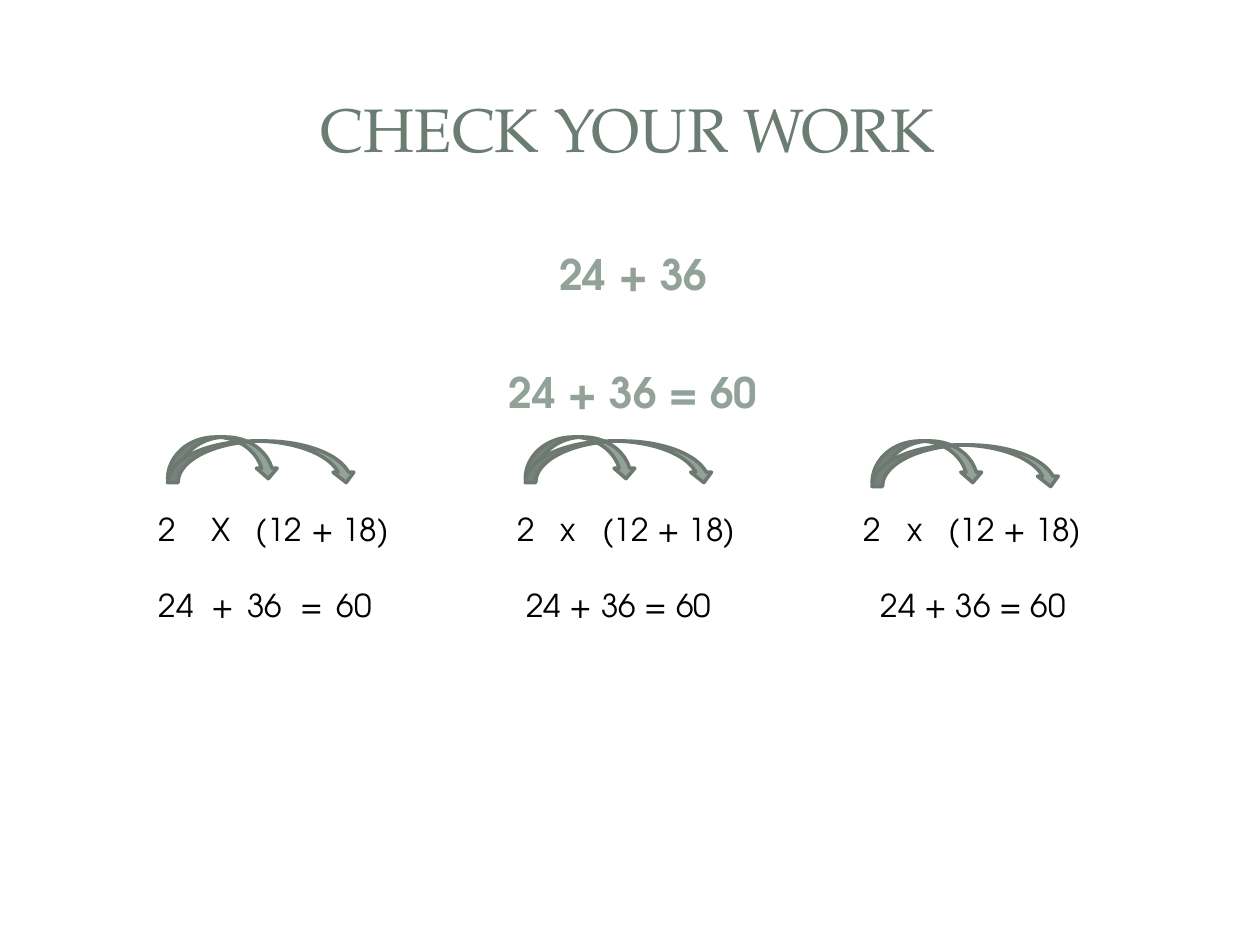
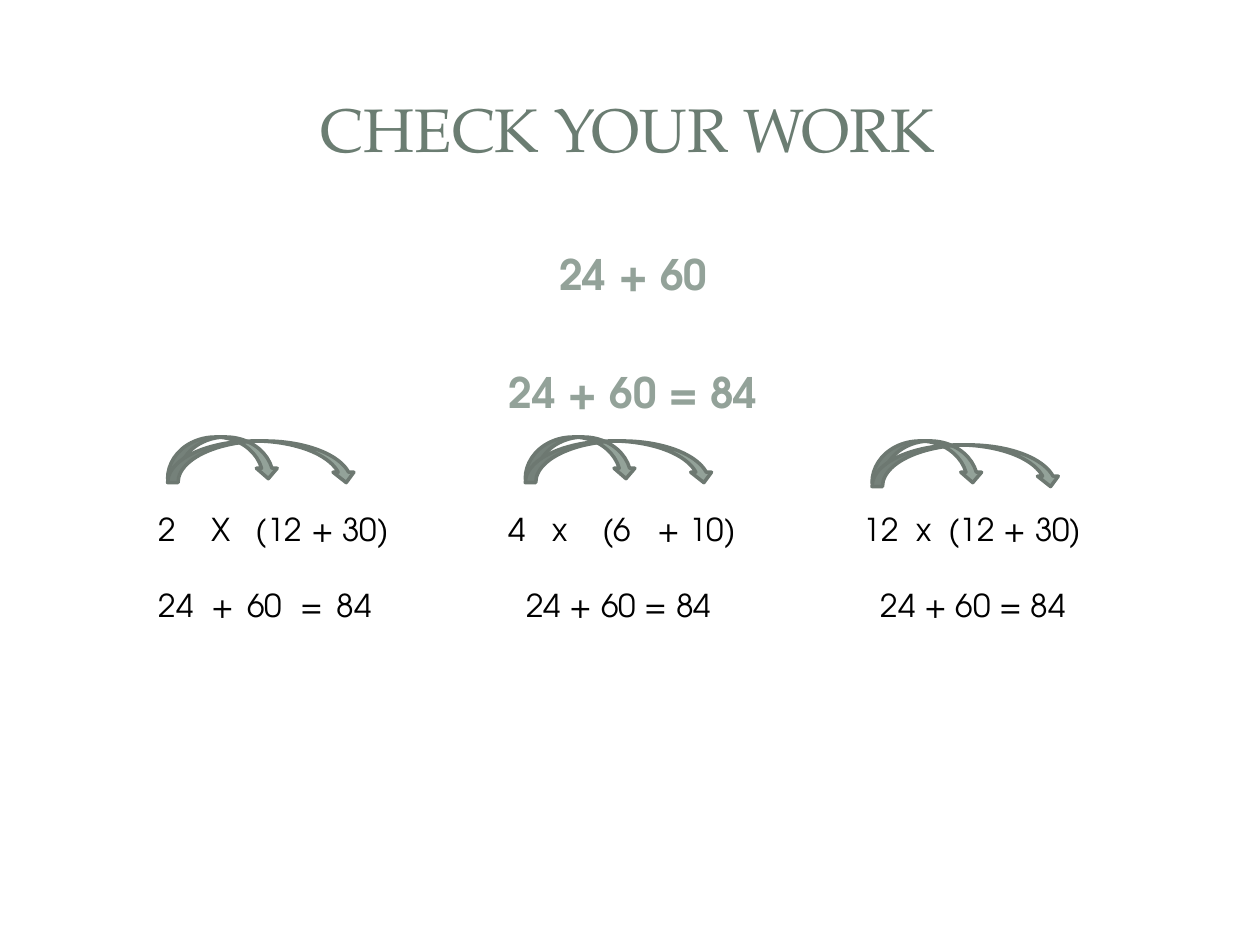
from dataclasses import dataclass

from lxml.etree import SubElement
from pptx import Presentation
from pptx.dml.color import RGBColor
from pptx.enum.shapes import MSO_SHAPE as Preset
from pptx.enum.text import MSO_ANCHOR as Anchor, PP_ALIGN as Align
from pptx.oxml.ns import qn
from pptx.util import Cm, Pt


@dataclass(frozen=True)
class Theme:
    heading_font: str = "TeX Gyre Pagella"
    body_font: str = "TeX Gyre Adventor"
    title: RGBColor = RGBColor(0x6B, 0x7D, 0x72)
    accent: RGBColor = RGBColor(0x93, 0xA2, 0x99)
    outline: RGBColor = RGBColor(0x6D, 0x78, 0x71)
    ink: RGBColor = RGBColor(0, 0, 0)
    title_size: float = 35
    answer_size: float = 24
    working_size: float = 18
    answer_gap: float = 38.5
    working_gap: float = 21.7


@dataclass(frozen=True)
class Box:
    left: float
    top: float
    width: float
    height: float

    def inside(self, left, top, width, height):
        return Box(self.left + left, self.top + top, width, height)

    def lengths(self):
        return [Cm(n) for n in (self.left, self.top, self.width, self.height)]


THEME = Theme()
TITLE_BOX = Box(1.19, 1.14, 22.94, 2.9)
ANSWER_BOX = Box(1.27, 4.88, 22.86, 12.14)
WORKING_BOXES = [
    Box(2.95, 8.81, 5.31, 3.92),
    Box(9.83, 8.81, 5.31, 3.92),
    Box(16.81, 8.89, 5.31, 3.84),
]
ARROW_INSETS = [0.43, 0.76, 0.77]
ARROW_WIDTHS = [2.24, 3.81]
WORKING_TEXT_TOP = 10.16

FIRST_STOPS = [0, 1.06, 1.96]
MIDDLE_STOPS = [0.35, 1.23, 2.06]
SUM_STOPS = [0, 1.06, 1.79, 2.85, 3.59]

EXERCISES = [
    {
        "answers": ["24 + 36", "24 + 36 = 60"],
        "workings": [
            [(FIRST_STOPS, ["2", "X", "(12 + 18)"]),
             (SUM_STOPS, ["24", "+", "36", "=", "60"])],
            [(MIDDLE_STOPS, ["2", "x", "(12 + 18)"]),
             ([0.53], ["24 + 36 = 60"])],
            [(MIDDLE_STOPS, ["2", "x", "(12 + 18)"]),
             ([0.7], ["24 + 36 = 60"])],
        ],
    },
    {
        "answers": ["24 + 60", "24 + 60 = 84"],
        "workings": [
            [(FIRST_STOPS, ["2", "X", "(12 + 30)"]),
             (SUM_STOPS, ["24", "+", "60", "=", "84"])],
            [([0.18, 1.06, 2.06, 3.18], ["4", "x", "(6", "+ 10)"]),
             ([0.53], ["24 + 60 = 84"])],
            [([0.35, 1.41, 2.06], ["12", "x", "(12 + 30)"]),
             ([0.7], ["24 + 60 = 84"])],
        ],
    },
]


def format_runs(para, font, size, color, bold=False):
    for span in para.runs:
        span.font.name = font
        span.font.size = Pt(size)
        span.font.color.rgb = color
        span.font.bold = bold


def add_lines(page, box, lines, size, color, gap, bold=False):
    frame = page.shapes.add_textbox(*box.lengths()).text_frame
    frame.word_wrap = True
    frame.text = "\n".join(lines)
    for para in frame.paragraphs:
        format_runs(para, THEME.body_font, size, color, bold)
    for para in frame.paragraphs[1:]:
        para.space_before = Pt(gap)
    return frame


def set_tab_stops(para, stops):
    tabs = SubElement(para._p.get_or_add_pPr(), qn("a:tabLst"))
    for stop in stops:
        if stop:
            SubElement(tabs, qn("a:tab"), pos=str(Cm(stop)), algn="l")


def place_title(page, box, text):
    title = page.shapes.title
    title.left, title.top, title.width, title.height = box.lengths()
    frame = title.text_frame
    frame.text = text
    frame.vertical_anchor = Anchor.MIDDLE
    para = frame.paragraphs[0]
    para.alignment = Align.CENTER
    format_runs(para, THEME.heading_font, THEME.title_size, THEME.title)


def place_answers(page, box, answers):
    frame = add_lines(page, box, answers, THEME.answer_size, THEME.accent,
                      THEME.answer_gap, bold=True)
    frame.paragraphs[0].space_before = Pt(0.2 * THEME.answer_size)
    for para in frame.paragraphs:
        para.alignment = Align.CENTER
        para._p.get_or_add_pPr().set("marL", str(Cm(0.13)))


def place_arrows(page, box, inset):
    for order, width in enumerate(ARROW_WIDTHS):
        place = box.inside(inset, 0.08 * order, width, 0.84)
        arrow = page.shapes.add_shape(Preset.CURVED_DOWN_ARROW, *place.lengths())
        arrow.shadow.inherit = False
        arrow.fill.solid()
        arrow.fill.fore_color.rgb = THEME.accent
        arrow.line.color.rgb = THEME.outline
        arrow.line.width = Pt(2)


def place_working(page, box, inset, rows):
    place_arrows(page, box, inset)
    text_box = box.inside(0, WORKING_TEXT_TOP - box.top, box.width, 2.57)
    lines = [("\t" if stops[0] else "") + "\t".join(terms) for stops, terms in rows]
    frame = add_lines(page, text_box, lines, THEME.working_size, THEME.ink,
                      THEME.working_gap)
    for para, (stops, _) in zip(frame.paragraphs, rows):
        set_tab_stops(para, stops)


def build_check_page(deck, exercise):
    page = deck.slides.add_slide(deck.slide_layouts.get_by_name("Title Only"))
    place_title(page, TITLE_BOX, "CHECK YOUR WORK")
    place_answers(page, ANSWER_BOX, exercise["answers"])
    for box, inset, rows in zip(WORKING_BOXES, ARROW_INSETS, exercise["workings"]):
        place_working(page, box, inset, rows)


def main():
    deck = Presentation()
    deck.slide_width, deck.slide_height = Cm(25.4), Cm(19.05)
    for exercise in EXERCISES:
        build_check_page(deck, exercise)
    deck.save("out.pptx")


if __name__ == "__main__":
    main()
